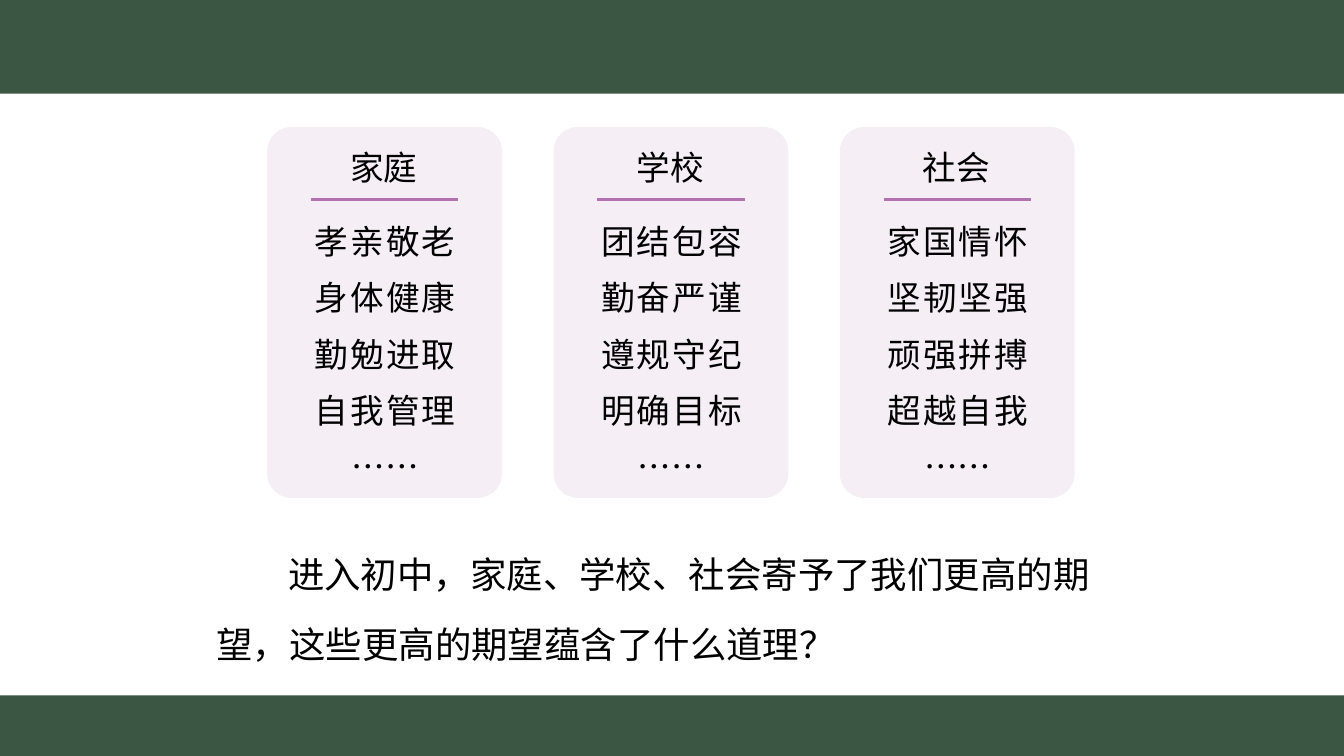
from pptx import Presentation
from pptx import util as u
from pptx.dml import color
from pptx.enum import shapes, text
from pptx.oxml import xmlchemy as xml

WIDTH, HEIGHT = 13.33, 7.5
GREEN, LILAC, PURPLE, BLACK = "3B5643", "F5EEF5", "B371AF", "000000"
FONT = "Noto Sans CJK SC"
CARD_LEFT, CARD_TOP, CARD_WIDTH, CARD_HEIGHT, CARD_PITCH = 2.65, 1.26, 2.33, 3.68, 2.84
RULE_TOP, RULE_WIDTH = 1.98, 1.46
CARDS = [
    ("家庭", ["孝亲敬老", "身体健康", "勤勉进取", "自我管理"]),
    ("学校", ["团结包容", "勤奋严谨", "遵规守纪", "明确目标"]),
    ("社会", ["家国情怀", "坚韧坚强", "顽强拼搏", "超越自我"]),
]
QUESTION = ["进入初中，家庭、学校、社会寄予了我们更高的期", "望，这些更高的期望蕴含了什么道理？"]


def rgb(value):
    """Turn a hex string into a colour."""
    return color.RGBColor.from_string(value)


def add_panel(slide, kind, left, top, width, height, fill):
    """Add a flat filled shape without an outline."""
    shape = slide.shapes.add_shape(
        kind, u.Inches(left), u.Inches(top), u.Inches(width), u.Inches(height))
    shape.shadow.inherit = False
    shape.fill.solid()
    shape.fill.fore_color.rgb = rgb(fill)
    shape.line.fill.background()
    return shape


def add_rule(slide, left, top, width):
    """Add a horizontal rule."""
    rule = slide.shapes.add_connector(
        shapes.MSO_CONNECTOR.STRAIGHT,
        u.Inches(left), u.Inches(top), u.Inches(left + width), u.Inches(top))
    rule.line.color.rgb = rgb(PURPLE)
    rule.line.width = u.Pt(1.75)
    xml.OxmlElement("a:effectLst")
    rule._element.spPr.append(xml.OxmlElement("a:effectLst"))


def style_paragraph(paragraph, size, spacing):
    """Set the font, for Latin and East Asian letters, and the letter spacing."""
    font = paragraph.font
    font.name, font.size = FONT, u.Pt(size)
    font.color.rgb = rgb(BLACK)
    properties = font._element if hasattr(font, "_element") else font._rPr
    east_asian = xml.OxmlElement("a:ea")
    east_asian.set("typeface", FONT)
    properties.append(east_asian)
    properties.set("spc", str(round(spacing * 100)))


def add_text(slide, lines, left, top, width, height, size,
             align=text.PP_ALIGN.LEFT, line_spacing=1.0, spacing=0, wrap=True):
    """Add a text box with one paragraph for each line."""
    box = slide.shapes.add_textbox(
        u.Inches(left), u.Inches(top), u.Inches(width), u.Inches(height))
    frame = box.text_frame
    frame.word_wrap = wrap
    frame.auto_size = text.MSO_AUTO_SIZE.SHAPE_TO_FIT_TEXT
    frame.text = "\n".join(lines)
    for paragraph in frame.paragraphs:
        paragraph.alignment = align
        paragraph.line_spacing = line_spacing
        style_paragraph(paragraph, size, 0 if paragraph.text == "……" else spacing)
    return frame


def add_card(slide, column, title, virtues):
    """Add one card with its title, rule and list."""
    left = CARD_LEFT + column * CARD_PITCH
    centre = left + CARD_WIDTH / 2
    card = add_panel(slide, shapes.MSO_SHAPE.ROUNDED_RECTANGLE,
                     left, CARD_TOP, CARD_WIDTH, CARD_HEIGHT, LILAC)
    card.adjustments[0] = 0.105
    add_rule(slide, centre - RULE_WIDTH / 2, RULE_TOP, RULE_WIDTH)
    add_text(slide, [title], centre - 0.44, 1.41, 0.88, 0.5, 24, wrap=False)
    add_text(slide, virtues + ["……"], centre - 0.89, RULE_TOP, 1.79, 2.93, 24,
             align=text.PP_ALIGN.CENTER, line_spacing=1.4, spacing=1.5)


def main():
    """Build the slide and save it."""
    presentation = Presentation()
    presentation.slide_width = u.Inches(WIDTH)
    presentation.slide_height = u.Inches(HEIGHT)
    slide = presentation.slides.add_slide(presentation.slide_layouts[6])
    for top, height in ((0, 0.93), (6.9, 0.6)):
        add_panel(slide, shapes.MSO_SHAPE.RECTANGLE, 0, top, WIDTH, height, GREEN)
    question = add_text(slide, QUESTION, 2.05, 5.17, 9.44, 1.5, 26, line_spacing=1.6)
    question.paragraphs[0]._p.get_or_add_pPr().set("indent", str(u.Inches(0.71)))
    for column, (title, virtues) in enumerate(CARDS):
        add_card(slide, column, title, virtues)
    presentation.save("out.pptx")


if __name__ == "__main__":
    main()
